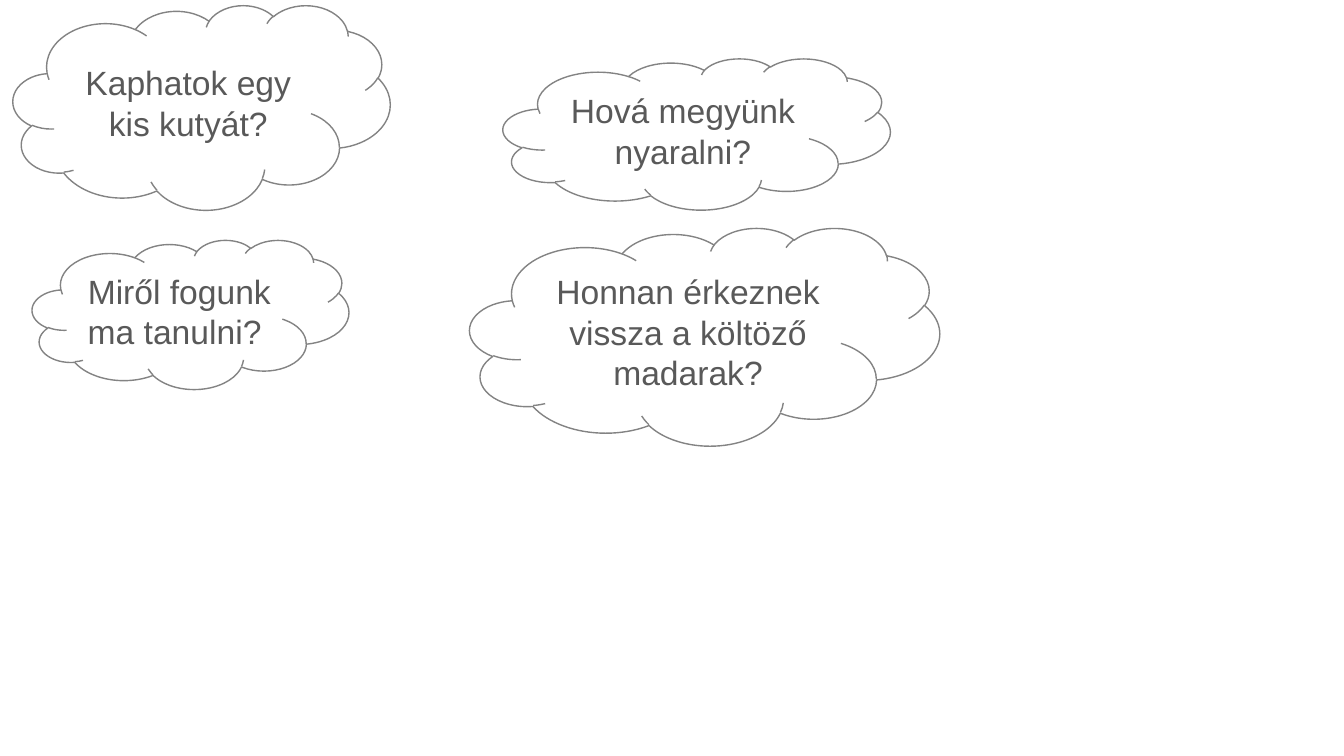
import pptx
import pptx.util
import pptx.dml.color
import pptx.enum.shapes
import pptx.enum.text

Inches = pptx.util.Inches
COLORS = {
    name: pptx.dml.color.RGBColor.from_string(value)
    for name, value in {"fill": "FFFFFF", "outline": "838383", "text": "595959"}.items()
}

presentation = pptx.Presentation()
presentation.slide_width = Inches(13.33)
presentation.slide_height = Inches(7.5)
slide = presentation.slides.add_slide(presentation.slide_layouts[6])

# Thought clouds: left, top, width, height, question
clouds = [
    (0.13, 0.05, 3.74, 2.03, "Kaphatok egy kis kutyát?"),
    (0.32, 2.38, 3.14, 1.48, "Miről fogunk ma tanulni? "),
    (4.99, 0.58, 3.84, 1.5, "Hová megyünk nyaralni?"),
    (4.66, 2.26, 4.66, 2.16, "Honnan érkeznek vissza a költöző madarak?"),
]
for left, top, width, height, question in clouds:
    cloud = slide.shapes.add_shape(
        pptx.enum.shapes.MSO_SHAPE.CLOUD,
        Inches(left), Inches(top), Inches(width), Inches(height),
    )
    cloud.shadow.inherit = False
    cloud.fill.solid()
    cloud.fill.fore_color.rgb = COLORS["fill"]
    cloud.line.color.rgb = COLORS["outline"]
    cloud.line.width = pptx.util.Pt(1)

    # Question text
    text_frame = cloud.text_frame
    text_frame.word_wrap = True
    text_frame.vertical_anchor = pptx.enum.text.MSO_ANCHOR.MIDDLE
    paragraph = text_frame.paragraphs[0]
    paragraph.text = question
    paragraph.alignment = pptx.enum.text.PP_ALIGN.CENTER
    paragraph.font.name = "Arial"
    paragraph.font.size = pptx.util.Pt(24)
    paragraph.font.color.rgb = COLORS["text"]

presentation.save("out.pptx")
